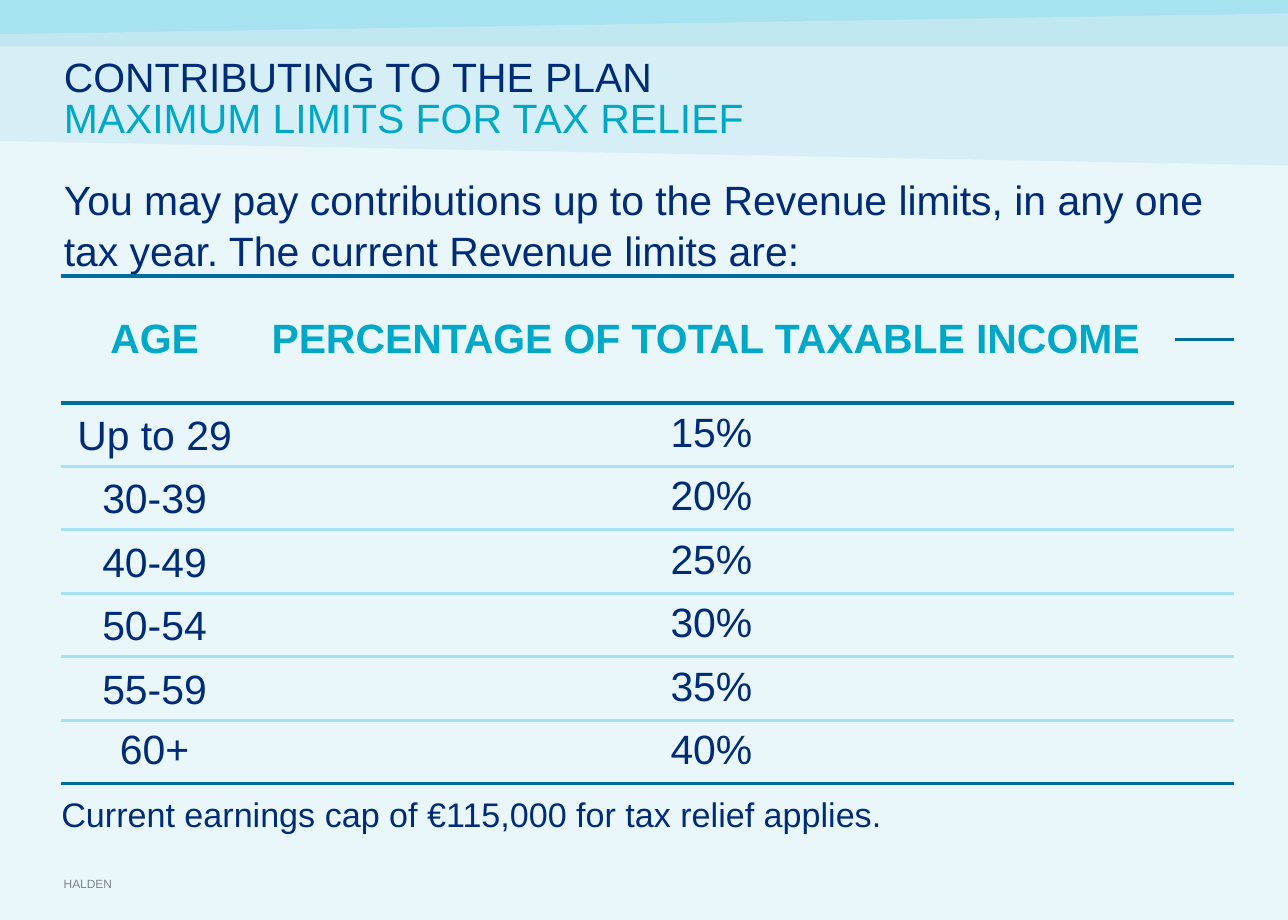
"""Build the slide on pension contribution limits for tax relief."""
from dataclasses import dataclass

from lxml.etree import SubElement
from pptx import Presentation
from pptx.dml.color import RGBColor as RGB
from pptx.enum.text import MSO_ANCHOR as Anchor, MSO_AUTO_SIZE as Fit, PP_ALIGN as Align
from pptx.oxml.ns import qn
from pptx.util import Inches, Pt

TITLE = ["CONTRIBUTING TO THE PLAN", "MAXIMUM LIMITS FOR TAX RELIEF"]
INTRO = ("You may pay contributions up to the Revenue limits, in any one tax year. "
         "The current Revenue limits are:")
HEAD = ["AGE", "PERCENTAGE OF TOTAL TAXABLE INCOME "]
LIMITS = [("Up to 29", "15%"), ("30-39", "20%"), ("40-49", "25%"),
          ("50-54", "30%"), ("55-59", "35%"), ("60+", "40%")]
NOTE = "Current earnings cap of €115,000 for tax relief applies."
BRAND = "HALDEN"
WIDE, HIGH = 10.5, 7.5
COLS = [1.52, 7.56, 0.22, 0.22]
HEAD_ROWS = 2


@dataclass(frozen=True)
class Theme:
    """Colours, font and type sizes."""
    back: str = "EAF7FA"
    navy: str = "002C77"
    teal: str = "00A8C8"
    rule: str = "006D9E"
    pale: str = "A6E2EF"
    mid: str = "C1E8F1"
    soft: str = "D6EFF6"
    grey: str = "7C848A"
    font: str = "Arial"
    main: int = 24
    note: int = 20
    tiny: int = 7
    line: float = 2.25


T = Theme()
BANDS = [(T.pale, 0, 0, 0.14, 0.31),
         (T.mid, 0.28, 0.11, 0.38, 0.38),
         (T.soft, 0.38, 0.38, 1.35, 1.15)]


def add_run(para, text, size, color, bold=False):
    """Add one styled run."""
    run = para.add_run()
    run.text = text
    font = run.font
    font.name, font.size, font.bold = T.font, Pt(size), bold
    font.color.rgb = RGB.from_string(color)


def set_frame(frame, pads, anchor=Anchor.TOP, wrap=True):
    """Set margins, anchor and wrapping, and return the first paragraph."""
    frame.auto_size, frame.word_wrap = Fit.NONE, wrap
    frame.vertical_anchor = anchor
    (frame.margin_left, frame.margin_top,
     frame.margin_right, frame.margin_bottom) = map(Inches, pads)
    para = frame.paragraphs[0]
    para.alignment = Align.LEFT
    return para


def add_text(slide, box, text, size, color, **opts):
    """Add a text box without margins."""
    frame = slide.shapes.add_textbox(*map(Inches, box)).text_frame
    para = set_frame(frame, (0, 0, 0, 0), **opts)
    add_run(para, text, size, color)
    return para


def add_band(slide, color, left_top, right_top, right_low, left_low):
    """Draw one slanted band across the slide."""
    ends = [(0, left_top), (WIDE, right_top), (WIDE, right_low), (0, left_low)]
    start, *rest = [(Inches(x), Inches(y)) for x, y in ends]
    path = slide.shapes.build_freeform(*start)
    path.add_line_segments(rest)
    band = path.convert_to_shape()
    band.shadow.inherit = False
    band.fill.solid()
    band.fill.fore_color.rgb = RGB.from_string(color)
    band.line.fill.background()


def set_title(slide):
    """Place the title above the bands and fill its two lines."""
    title = slide.shapes.title
    slide.shapes._spTree.append(title._element)
    title.left, title.top, title.width, title.height = map(
        Inches, (0.52, 0.44, 9.45, 0.94))
    para = set_frame(title.text_frame, (0, 0.05, 0.1, 0.05))
    para.line_spacing = 0.83
    add_run(para, TITLE[0], T.main, T.navy)
    para.add_line_break()
    add_run(para, TITLE[1], T.main, T.teal)


def set_edges(cell, top, low):
    """Rule a cell above and below only."""
    props = cell._tc.get_or_add_tcPr()
    for side, color in (("L", None), ("R", None), ("T", top), ("B", low)):
        line = SubElement(props, qn(f"a:ln{side}"))
        if color:
            line.set("w", str(Pt(T.line)))
            fill = SubElement(line, qn("a:solidFill"))
            SubElement(fill, qn("a:srgbClr")).set("val", color)
        else:
            SubElement(line, qn("a:noFill"))
    cell.fill.background()


def fill_cell(cell, text, color, anchor, bold=False):
    """Put centred text in a cell."""
    cell.vertical_anchor = anchor
    cell.margin_left = cell.margin_right = Inches(0.1)
    cell.margin_top = cell.margin_bottom = Inches(0.06)
    para = cell.text_frame.paragraphs[0]
    para.alignment = Align.CENTER
    add_run(para, text, T.main, color, bold)


def add_limits(slide):
    """Add the table of limits by age."""
    count = HEAD_ROWS + len(LIMITS)
    table = slide.shapes.add_table(
        count, len(COLS), *map(Inches, (0.5, 2.25, sum(COLS), 4.14))).table
    table.first_row = table.horz_banding = False
    for col, width in zip(table.columns, COLS):
        col.width = Inches(width)
    for row in range(count):
        top = T.rule if row <= HEAD_ROWS else T.pale
        low = T.rule if row < HEAD_ROWS or row == count - 1 else T.pale
        for col in range(len(COLS)):
            set_edges(table.cell(row, col), top, low)
    for col, text in enumerate(HEAD):
        cell = table.cell(0, col)
        cell.merge(table.cell(HEAD_ROWS - 1, col))
        fill_cell(cell, text, T.teal, Anchor.MIDDLE, True)
    table.cell(0, 2).merge(table.cell(0, 3))
    for row, (age, share) in enumerate(LIMITS, HEAD_ROWS):
        anchor = Anchor.TOP if row == count - 1 else Anchor.BOTTOM
        fill_cell(table.cell(row, 0), age, T.navy, anchor)
        fill_cell(table.cell(row, 1), share, T.navy, Anchor.TOP)


def main():
    """Assemble and save the slide."""
    deck = Presentation()
    deck.slide_width, deck.slide_height = Inches(WIDE), Inches(HIGH)
    slide = deck.slides.add_slide(deck.slide_layouts[5])
    slide.background.fill.solid()
    slide.background.fill.fore_color.rgb = RGB.from_string(T.back)
    add_text(slide, (0.52, 7.15, 3.16, 0.11), BRAND, T.tiny, T.grey,
             anchor=Anchor.BOTTOM, wrap=False)
    for band in BANDS:
        add_band(slide, *band)
    set_title(slide)
    intro = add_text(slide, (0.52, 1.4, 9.45, 0.87), INTRO, T.main, T.navy)
    intro.line_spacing = 1.05
    add_limits(slide)
    add_text(slide, (0.5, 6.47, 9.52, 0.59), NOTE, T.note, T.navy)
    deck.save("out.pptx")


if __name__ == "__main__":
    main()
